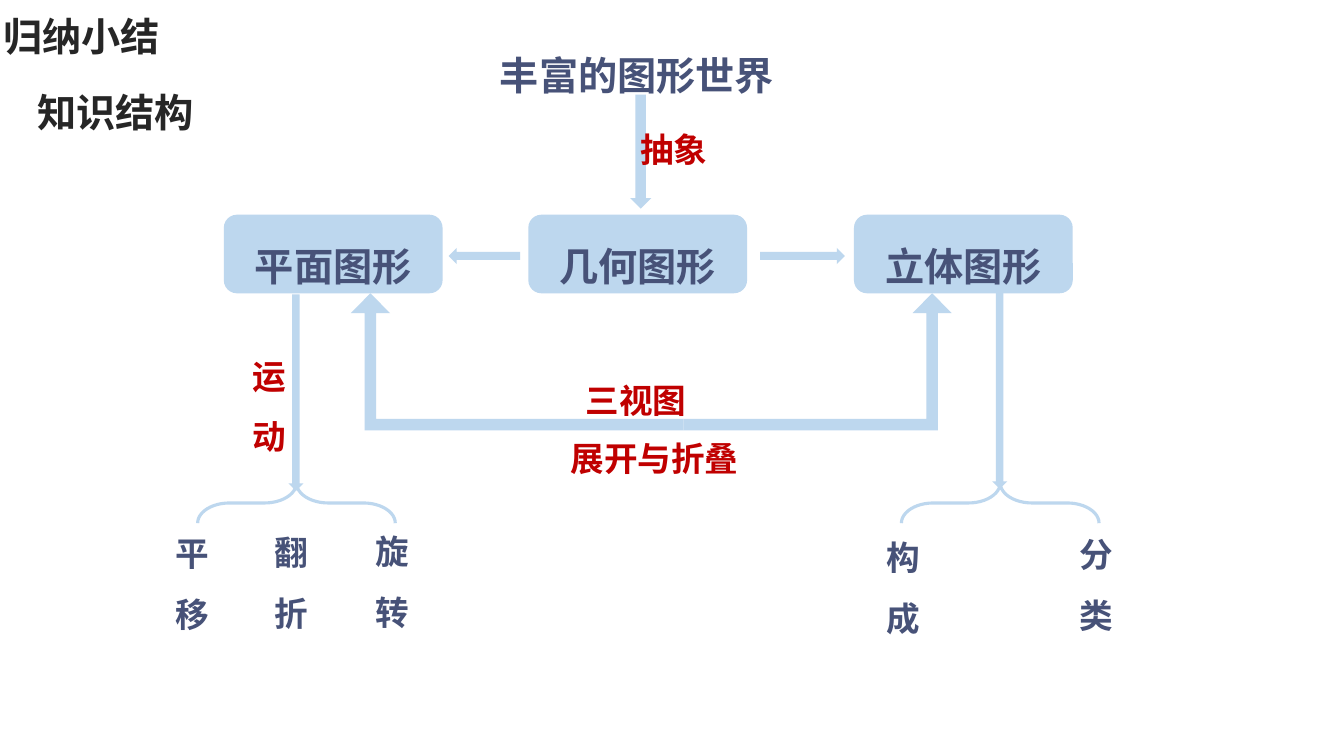
from dataclasses import dataclass

from pptx import Presentation
from pptx.dml.color import RGBColor
from pptx.enum.shapes import MSO_SHAPE
from pptx.enum.text import MSO_ANCHOR, MSO_AUTO_SIZE, PP_ALIGN
from pptx.oxml.ns import qn
from pptx.util import Inches, Pt


@dataclass(frozen=True)
class Theme:
    sky: RGBColor = RGBColor(0xBD, 0xD7, 0xEE)
    navy: RGBColor = RGBColor(0x47, 0x52, 0x78)
    red: RGBColor = RGBColor(0xC0, 0x00, 0x00)
    ink: RGBColor = RGBColor(0x26, 0x26, 0x26)
    large: int = 28
    small: int = 24
    sans: str = "Noto Sans CJK SC"
    plain: str = "Calibri"
    line: float = 2.25


@dataclass(frozen=True)
class Box:
    col: float
    row: float
    cols: float
    rows: float

    def place(self) -> tuple:
        return tuple(round(CELL * n) for n in (self.col, self.row, self.cols, self.rows))


@dataclass(frozen=True)
class Style:
    size: int
    tint: RGBColor
    face: str
    space: float = 1.5
    indent: float = 0


@dataclass(frozen=True)
class Label:
    text: str
    box: Box
    style: Style


@dataclass(frozen=True)
class Block:
    kind: MSO_SHAPE
    box: Box
    adjust: tuple = ()
    flip: bool = False


THEME = Theme()
CELL = Inches(0.1)
HEAD = Style(THEME.large, THEME.ink, THEME.sans, 1.2)
NODE = Style(THEME.large, THEME.navy, THEME.sans)
TOPIC = Style(THEME.large, THEME.navy, THEME.sans, indent=5)
NOTE = Style(THEME.small, THEME.red, THEME.sans, indent=5)
LEAF = Style(THEME.small, THEME.navy, THEME.plain, indent=5)

TITLE = Label("归纳小结", Box(-0.1, 0.2, 45, 5.7), HEAD)
PART = Label("知识结构", Box(3.3, 7.4, 31.5, 6.5), HEAD)
NODES = [("平面图形", 22.2), ("几何图形", 52.4), ("立体图形", 84.7)]
LEAVES = [("平\n移", 11.4, 50.4), ("翻\n折", 21.2, 50.3), ("旋\n转", 31.3, 50.2),
          ("构\n成", 81.9, 50.8), ("分\n类", 101.1, 50.5)]
LABELS = [
    Label("丰富的图形世界", Box(43.6, 2.3, 35.5, 8.1), TOPIC),
    Label("抽象", Box(57.5, 10.3, 19.5, 7.1), NOTE),
    Label("三视图", Box(52.1, 35.2, 33.3, 7.1), NOTE),
    Label("展开与折叠", Box(50.6, 40.9, 33.3, 7.1), NOTE),
    Label("运\n动", Box(19.1, 32.8, 12.7, 13.1), NOTE),
] + [Label(text, Box(col, row, 17.6, 13.1), LEAF) for text, col, row in LEAVES]

BEND = (0.083, 0.143, 0.145)
ARROWS = [
    Block(MSO_SHAPE.RIGHT_ARROW, Box(75.4, 24.6, 8.4, 1.6)),
    Block(MSO_SHAPE.LEFT_ARROW, Box(44.5, 24.6, 7.1, 1.6)),
    Block(MSO_SHAPE.DOWN_ARROW, Box(62.5, 9.4, 2.1, 11.3)),
    Block(MSO_SHAPE.BENT_UP_ARROW, Box(34.8, 29.1, 33, 13.6), BEND, True),
    Block(MSO_SHAPE.BENT_UP_ARROW, Box(67.8, 29.1, 26.6, 13.6), BEND),
]
FORKS = [(28.6, 29.2), (98.4, 29)]


def write(frame, text: str, style: Style, align=PP_ALIGN.LEFT) -> None:
    frame.text = text
    frame.word_wrap = True
    for para in frame.paragraphs:
        para.alignment = align
        para.line_spacing = style.space
        para._p.get_or_add_pPr().set("indent", str(round(CELL * style.indent)))
        for run in para.runs:
            font = run.font
            font.name, font.size, font.bold = style.face, Pt(style.size), True
            font.color.rgb = style.tint
            east = run._r.get_or_add_rPr().makeelement(qn("a:ea"), {"typeface": style.face})
            run._r.rPr.find(qn("a:latin")).addnext(east)


def inset(frame, size: float) -> None:
    frame.margin_left = frame.margin_right = Inches(size)
    frame.margin_top = frame.margin_bottom = Inches(size)
    frame.vertical_anchor = MSO_ANCHOR.MIDDLE


def add_title(slide, label: Label) -> None:
    title = slide.shapes.title
    title.left, title.top, title.width, title.height = label.box.place()
    title.text_frame.auto_size = MSO_AUTO_SIZE.NONE
    inset(title.text_frame, 0.04)
    write(title.text_frame, label.text, label.style)


def add_label(slide, label: Label):
    frame = slide.shapes.add_textbox(*label.box.place()).text_frame
    write(frame, label.text, label.style)
    return frame


def add_block(slide, block: Block):
    shape = slide.shapes.add_shape(block.kind, *block.box.place())
    shape.shadow.inherit = False
    shape.fill.solid()
    shape.fill.fore_color.rgb = THEME.sky
    shape.line.fill.background()
    for spot, value in enumerate(block.adjust):
        shape.adjustments[spot] = value
    if block.flip:
        shape._element.spPr.find(qn("a:xfrm")).set("flipH", "1")
    return shape


def add_node(slide, text: str, col: float) -> None:
    box = Box(col, 21.3, 21.7, 7.8)
    shape = add_block(slide, Block(MSO_SHAPE.FLOWCHART_ALTERNATE_PROCESS, box))
    inset(shape.text_frame, 0)
    write(shape.text_frame, text, NODE, PP_ALIGN.CENTER)


def add_fork(slide, col: float, row: float) -> None:
    add_block(slide, Block(MSO_SHAPE.DOWN_ARROW, Box(col, row, 1.5, 19.5)))
    box = Box(col - 1.2, 40.1, 4, 19.6)
    brace = add_block(slide, Block(MSO_SHAPE.LEFT_BRACE, box, (0.791, 0.5)))
    brace.rotation = 90
    brace.fill.background()
    brace.line.color.rgb = THEME.sky
    brace.line.width = Pt(THEME.line)


def main() -> None:
    deck = Presentation()
    deck.slide_width, deck.slide_height = Inches(13.33), Inches(7.5)
    slide = deck.slides.add_slide(deck.slide_layouts[5])
    add_title(slide, TITLE)
    inset(add_label(slide, PART), 0.04)
    for text, col in NODES:
        add_node(slide, text, col)
    for arrow in ARROWS:
        add_block(slide, arrow)
    for col, row in FORKS:
        add_fork(slide, col, row)
    for label in LABELS:
        add_label(slide, label)
    deck.save("out.pptx")


if __name__ == "__main__":
    main()
